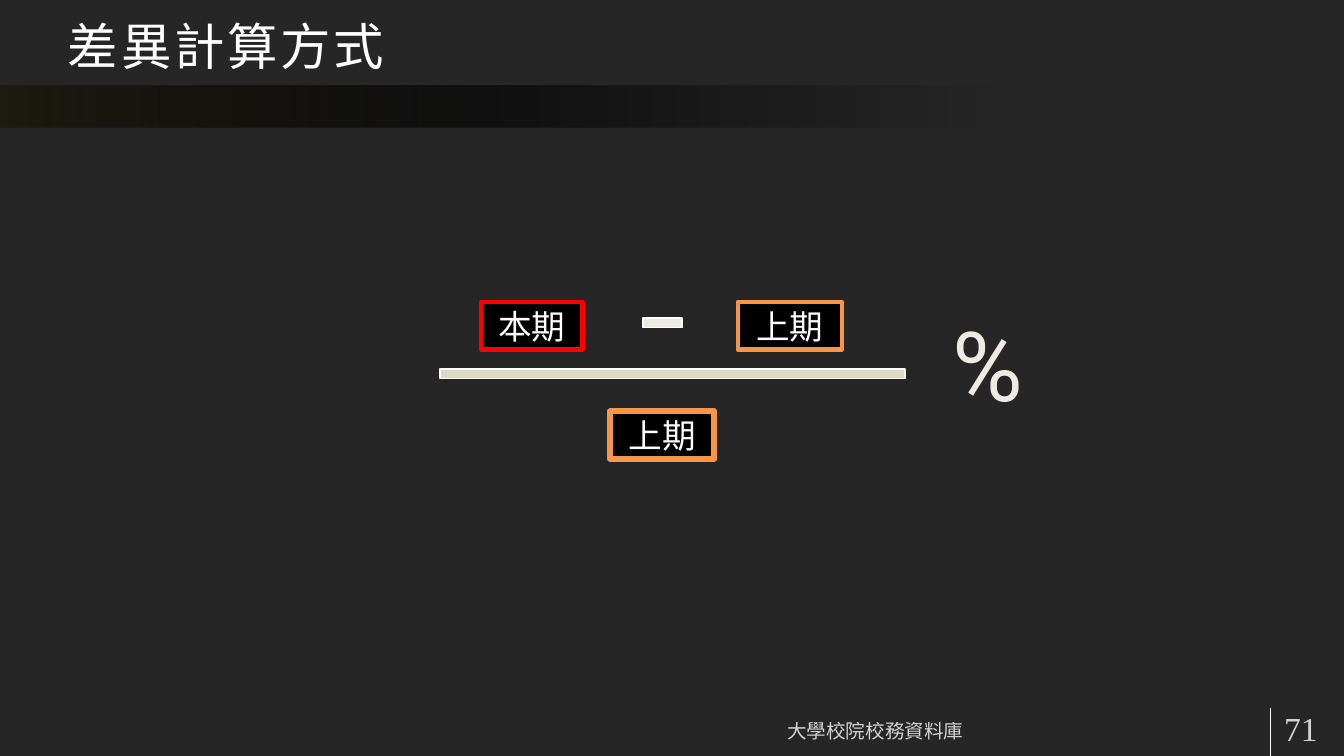
import pptx
import pptx.util
import pptx.dml.color
import pptx.enum.shapes
import pptx.enum.text
import pptx.oxml
import pptx.oxml.ns
from lxml import etree

Inches = pptx.util.Inches
Kind = pptx.enum.shapes.MSO_SHAPE
Align = pptx.enum.text.PP_ALIGN
Anchor = pptx.enum.text.MSO_ANCHOR
qn = pptx.oxml.ns.qn

WHITE, BLACK, RED, ORANGE = "FFFFFF", "000000", "FF0000", "F79646"
CREAM, SAND = "EEECE1", "DDD9C3"
SANS, SERIF = "Noto Sans CJK SC", "Times New Roman"


def color(code):
    return pptx.dml.color.RGBColor.from_string(code)


class Deck:
    def __init__(self, wide, high, back):
        self.prs = pptx.Presentation()
        self.prs.slide_width, self.prs.slide_height = Inches(wide), Inches(high)
        self.slide = self.prs.slides.add_slide(self.prs.slide_layouts[6])
        fill = self.slide.background.fill
        fill.solid()
        fill.fore_color.rgb = color(back)

    def shape(self, kind, at, fill=None, edge=None, width=1):
        item = self.slide.shapes.add_shape(kind, *map(Inches, at))
        item.shadow.inherit = False
        if fill:
            item.fill.solid()
            item.fill.fore_color.rgb = color(fill)
        if edge:
            item.line.color.rgb = color(edge)
            item.line.width = pptx.util.Pt(width)
        else:
            item.line.fill.background()
        return item

    def band(self, at, stops):
        """Rectangle with a left-to-right gradient of (place, colour, alpha)."""
        item = self.shape(Kind.RECTANGLE, at)
        item.fill.gradient()
        item.fill.gradient_angle = 0
        part = item._element.spPr.find(qn("a:gradFill")).find(qn("a:gsLst"))
        for old in list(part):
            part.remove(old)
        for place, code, alpha in stops:
            stop = etree.SubElement(part, qn("a:gs"), pos=str(place * 1000))
            tone = etree.SubElement(stop, qn("a:srgbClr"), val=code)
            etree.SubElement(tone, qn("a:alpha"), val=str(alpha * 1000))

    def rule(self, start, end, code, width):
        line = self.slide.shapes.add_connector(
            pptx.enum.shapes.MSO_CONNECTOR.STRAIGHT, *map(Inches, start + end))
        line.line.color.rgb = color(code)
        line.line.width = pptx.util.Pt(width)
        etree.SubElement(line._element.spPr, qn("a:effectLst"))

    def label(self, item, text, size, font, code=WHITE, align=Align.LEFT,
              anchor=Anchor.MIDDLE, pad=(0.1, 0.05), alpha=None, space=0):
        frame = item.text_frame
        frame.word_wrap = True
        frame.vertical_anchor = anchor
        frame.margin_left = frame.margin_right = Inches(pad[0])
        frame.margin_top = frame.margin_bottom = Inches(pad[1])
        para = frame.paragraphs[0]
        para.alignment = align
        run = para.add_run()
        run.text = text
        run.font.size = pptx.util.Pt(size)
        run.font.name = font
        run.font.color.rgb = color(code)
        props = run.font._element
        # East Asian face
        face = etree.Element(qn("a:ea"), typeface=SANS)
        props.find(qn("a:latin")).addnext(face)
        if space:
            props.set("spc", str(space * 100))
        if alpha:
            tone = props.find(qn("a:solidFill")).find(qn("a:srgbClr"))
            etree.SubElement(tone, qn("a:alpha"), val=str(alpha * 1000))

    def text(self, at, words, size, font, **style):
        box = self.slide.shapes.add_textbox(*map(Inches, at))
        self.label(box, words, size, font, **style)

    def term(self, at, words, edge, width):
        box = self.shape(Kind.RECTANGLE, at, BLACK, edge, width)
        self.label(box, words, 36, SERIF, align=Align.CENTER)

    def minus(self, at, fill):
        self.shape(Kind.MATH_MINUS, at, fill, WHITE, 2)


def main():
    deck = Deck(20, 11.25, "262626")

    # Title and band
    deck.band((0, 1.27, 20, 0.63),
              [(0, "1E1C11", 100), (39, BLACK, 54), (74, BLACK, 0)])
    deck.text((0.86, 0, 18, 1.35), "差異計算方式", 54, SANS,
              pad=(0.15, 0.07), space=3)

    # Footer and page number
    deck.rule((18.9, 10.54), (18.9, 11.25), WHITE, 0.75)
    foot = dict(pad=(0.18, 0.09), alpha=80)
    deck.text((7.16, 10.54, 11.73, 0.6), "大學校院校務資料庫", 21, SERIF,
              align=Align.CENTER, anchor=Anchor.BOTTOM, **foot)
    deck.text((18.93, 10.54, 1.15, 0.6), "71", 36, SERIF, **foot)

    # Fraction: (current - previous) / previous
    top = 4.49
    deck.term((7.16, top, 1.51, 0.71), "本期", RED, 4.5)
    deck.minus((9.46, top, 0.79, 0.62), CREAM)
    deck.term((10.98, top, 1.55, 0.71), "上期", ORANGE, 4.5)
    deck.minus((5.3, 5.25, 9.42, 0.62), SAND)
    deck.term((9.08, 6.12, 1.55, 0.71), "上期", ORANGE, 6)

    # Percent sign
    deck.text((14.08, top, 2.33, 1.84), "%", 103.5, "Roboto",
              code=CREAM, anchor=Anchor.TOP)

    deck.prs.save("out.pptx")


if __name__ == "__main__":
    main()
